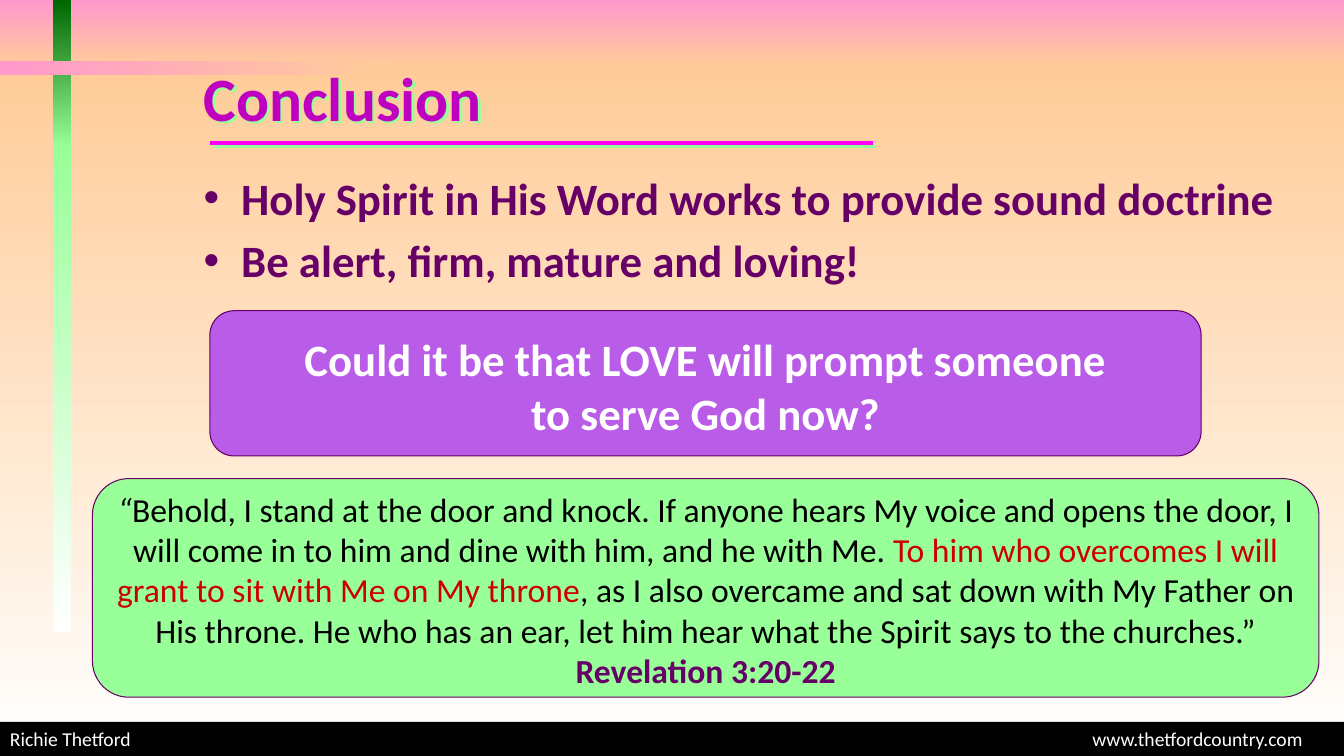
from lxml import etree
from pptx import Presentation
from pptx.dml.color import RGBColor
from pptx.enum import shapes, text
from pptx.oxml import ns
from pptx.util import Cm, Pt

COLORS = {
    "pink": "FF99CC", "peach": "FFCC99", "white": "FFFFFF", "black": "000000",
    "forest": "006600", "mint": "99FF99", "plum": "660066", "violet": "B95CE7",
    "magenta": "FF00FF", "title": "C000C0", "red": "CC0000",
}
WIDTH, HEIGHT = 33.87, 19.05
DOWN, RIGHT = 270, 0


def color(name):
    return RGBColor.from_string(COLORS[name])


def add_element(parent, tag, **attributes):
    return etree.SubElement(parent, ns.qn(tag), attributes)


def add_shadow(shape):
    """Give a shape or line a hard mint shadow to the lower right."""
    effects = add_element(shape._element.spPr, "a:effectLst")
    shadow = add_element(effects, "a:outerShdw", dist=str(Pt(2.8)), dir="2700000",
                         algn="ctr", rotWithShape="0")
    add_element(shadow, "a:srgbClr", val=COLORS["mint"])


def add_panel(slide, box, kind=shapes.MSO_SHAPE.RECTANGLE):
    panel = slide.shapes.add_shape(kind, *map(Cm, box))
    panel.shadow.inherit = False
    panel.line.fill.background()
    return panel


def add_gradient(slide, box, start, end, angle=DOWN):
    fill = add_panel(slide, box).fill
    fill.gradient()
    fill.gradient_angle = angle
    for stop, name in zip(fill.gradient_stops, (start, end)):
        stop.color.rgb = color(name)


def add_text_box(slide, box):
    text_box = slide.shapes.add_textbox(*map(Cm, box))
    text_box.text_frame.word_wrap = True
    return text_box


def style(paragraph, size, name=None, bold=None):
    font = paragraph.font
    font.name, font.size, font.bold = "Calibri", Pt(size), bold
    if name:
        font.color.rgb = color(name)


def add_background(slide, box):
    left, top, width, height = box
    sky, bar_left, bar_width, bar_split = 1.7, left + 1.33, 0.47, 3.73
    add_gradient(slide, (left, top, width, sky), "pink", "peach")
    add_gradient(slide, (left, top + sky, width, height - sky), "peach", "white")
    add_gradient(slide, (bar_left, top, bar_width, bar_split), "forest", "mint")
    add_gradient(slide, (bar_left, top + bar_split, bar_width, 12.2), "mint", "white")
    add_gradient(slide, (left, top + 1.53, 9.8, 0.35), "pink", "peach", RIGHT)


def add_title(slide, box, words):
    """Add the shadowed heading and the rule beneath it."""
    left, top = box[:2]
    title = add_text_box(slide, box)
    title.text_frame.vertical_anchor = text.MSO_ANCHOR.MIDDLE
    paragraph = title.text_frame.paragraphs[0]
    paragraph.text = words
    style(paragraph, 44, "title", True)
    add_shadow(title)

    rule_left, rule_top = left + 0.41, top + 2.76
    rule = slide.shapes.add_connector(
        shapes.MSO_CONNECTOR.STRAIGHT,
        Cm(rule_left), Cm(rule_top), Cm(rule_left + 16.72), Cm(rule_top))
    rule.line.color.rgb = color("magenta")
    rule.line.width = Pt(3)
    add_shadow(rule)


def add_bullets(slide, box, points):
    frame = add_text_box(slide, box).text_frame
    for index, point in enumerate(points):
        paragraph = frame.add_paragraph() if index else frame.paragraphs[0]
        paragraph.text = point
        properties = paragraph._p.get_or_add_pPr()
        properties.set("marL", str(Cm(0.95)))
        properties.set("indent", str(-Cm(0.95)))
        add_element(properties, "a:buFont", typeface="Arial")
        add_element(properties, "a:buChar", char="•")
        if index:
            paragraph.space_before = Pt(6.4)
        style(paragraph, 32, "plum", True)


def add_callout(slide, box, fill, text_offset):
    """Add a rounded panel and return the centred paragraph laid over it."""
    left, top, width, height = box
    panel = add_panel(slide, box, shapes.MSO_SHAPE.ROUNDED_RECTANGLE)
    panel.fill.solid()
    panel.fill.fore_color.rgb = color(fill)
    panel.line.color.rgb = color("plum")
    panel.line.width = Pt(0.75)
    text_box = add_text_box(slide, (left, top + text_offset, width, height - text_offset))
    paragraph = text_box.text_frame.paragraphs[0]
    paragraph.alignment = text.PP_ALIGN.CENTER
    return paragraph


def add_question(slide, box, lines):
    paragraph = add_callout(slide, box, "violet", 0.41)
    paragraph.text = "\v".join(lines)
    style(paragraph, 32, "white", True)


def add_quotation(slide, box, parts):
    paragraph = add_callout(slide, box, "mint", 0.13)
    style(paragraph, 24)
    for words, name, bold, italic in parts:
        run = paragraph.add_run()
        run.text = words
        run.font.color.rgb = color(name)
        run.font.bold, run.font.italic = bold, italic


def add_footer(slide, box, author, site):
    footer = add_panel(slide, box)
    footer.fill.solid()
    footer.fill.fore_color.rgb = color("black")
    paragraph = footer.text_frame.paragraphs[0]
    paragraph.text = f"{author}\t{site}"
    paragraph.alignment = text.PP_ALIGN.LEFT
    tabs = add_element(paragraph._p.get_or_add_pPr(), "a:tabLst")
    add_element(tabs, "a:tab", pos=str(Cm(27.28)), algn="l")
    style(paragraph, 14, "white")


def main():
    presentation = Presentation()
    presentation.slide_width, presentation.slide_height = Cm(WIDTH), Cm(HEIGHT)
    slide = presentation.slides.add_slide(presentation.slide_layouts[6])

    add_background(slide, (0, 0, WIDTH, HEIGHT))
    add_title(slide, (4.88, 0.84, 24.56, 3.18), "Conclusion")
    add_bullets(slide, (4.88, 4.17, 28.14, 3.66), [
        "Holy Spirit in His Word works to provide sound doctrine",
        "Be alert, firm, mature and loving!",
    ])
    add_question(slide, (5.29, 7.83, 24.98, 3.66), [
        "Could it be that LOVE will prompt someone",
        "to serve God now?",
    ])
    add_footer(slide, (0, 18.19, WIDTH, 0.86), "Richie Thetford", "www.thetfordcountry.com")
    add_quotation(slide, (2.33, 12.06, 30.91, 5.51), [
        ("“", "black", False, True),
        ("Behold, I stand at the door and knock. If anyone hears My voice and opens "
         "the door, I will come in to him and dine with him, and he with Me. ",
         "black", False, False),
        ("To him who overcomes I will grant to sit with Me on My throne",
         "red", False, False),
        (", as I also overcame and sat down with My Father on His throne. He who has "
         "an ear, let him hear what the Spirit says to the churches.” ",
         "black", False, False),
        ("Revelation 3:20-22", "plum", True, False),
    ])
    presentation.save("out.pptx")


if __name__ == "__main__":
    main()
